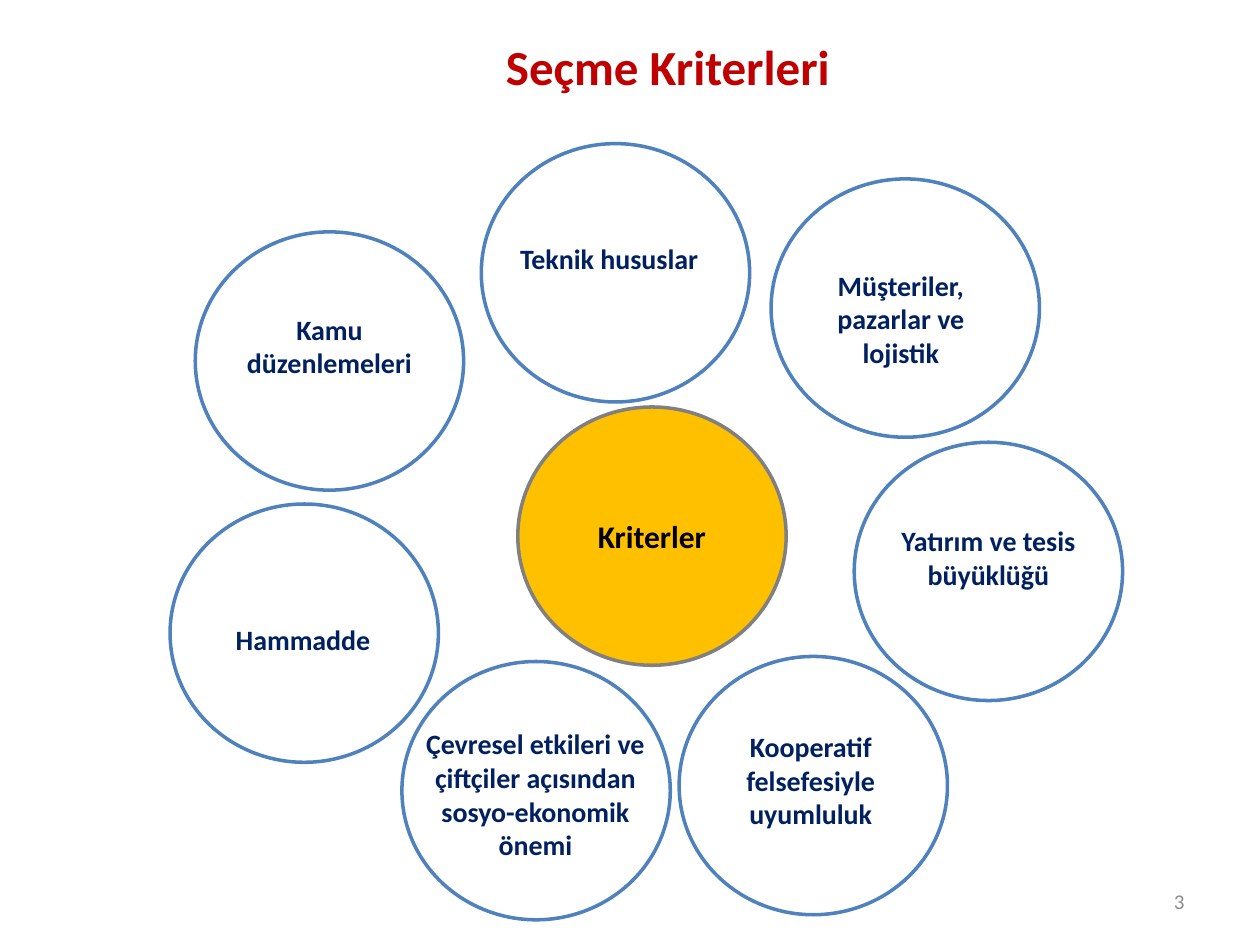
from pptx import Presentation
from pptx.dml.color import RGBColor
from pptx.enum.shapes import MSO_SHAPE
from pptx.enum.text import MSO_ANCHOR, PP_ALIGN
from pptx.util import Inches, Pt

presentation = Presentation()
presentation.slide_width = Inches(10)
presentation.slide_height = Inches(7.5)
column = presentation.slide_width / 100
row = presentation.slide_height / 75

slide = presentation.slides.add_slide(presentation.slide_layouts[5])


def grid_box(left, top, width, height):
    """Turn grid columns and rows into a position and size."""
    return (round(left * column), round(top * row),
            round(width * column), round(height * row))


def write(shape, text, size, color, bold=True, align=PP_ALIGN.CENTER,
          anchor=MSO_ANCHOR.MIDDLE):
    frame = shape.text_frame
    frame.text = text
    frame.word_wrap = True
    frame.vertical_anchor = anchor
    paragraph = frame.paragraphs[0]
    paragraph.alignment = align
    font = paragraph.runs[0].font
    font.name = "Calibri"
    font.size = Pt(size)
    font.bold = bold
    font.color.rgb = RGBColor.from_string(color)


title = slide.shapes.title
title.left, title.top, title.width, title.height = grid_box(8, 1.9, 90, 6.7)
write(title, "Seçme Kriterleri", 28, "C00000")

# Circle corner, then label text and label box
criteria = [
    (15.5, 18.4, "Kamu düzenlemeleri", (17.9, 24.3, 16.5, 6.4)),
    (31.9, 52.5, "Çevresel etkileri ve çiftçiler açısından sosyo-ekonomik önemi",
     (31.8, 57.2, 21.4, 11.8)),
    (67.8, 35.1, "Yatırım ve tesis büyüklüğü", (70.2, 41.1, 16.5, 6.4)),
    (38.2, 11.4, "Teknik hususlar", (40.1, 18.7, 16.5, 3.7)),
    (53.9, 52.1, "Kooperatif felsefesiyle uyumluluk", (54.5, 57.4, 19.7, 9.1)),
    (13.5, 40, "Hammadde", (15.8, 48.9, 16.5, 3.7)),
    (61.2, 14.2, "Müşteriler, pazarlar ve lojistik", (65.2, 20.8, 12.6, 9.1)),
]
circles = [(left, top, "FFFFFF", "4F81BD") for left, top, _, _ in criteria]
circles.append((41.1, 32.3, "FFC000", "808080"))

for left, top, fill, line in circles:
    circle = slide.shapes.add_shape(MSO_SHAPE.FLOWCHART_CONNECTOR,
                                    *grid_box(left, top, 21.3, 20.5))
    circle.shadow.inherit = False
    circle.fill.solid()
    circle.fill.fore_color.rgb = RGBColor.from_string(fill)
    circle.line.color.rgb = RGBColor.from_string(line)
    circle.line.width = Pt(2)
write(circle, "Kriterler", 18, "000000")  # the centre circle is the last one

for _, _, text, box in criteria:
    label = slide.shapes.add_textbox(*grid_box(*box))
    write(label, text, 16, "002060", anchor=MSO_ANCHOR.TOP)

page_number = slide.shapes.add_textbox(*grid_box(71.7, 69.5, 23.3, 4))
write(page_number, "3", 12, "8C8C8C", bold=False, align=PP_ALIGN.RIGHT)

presentation.save("out.pptx")
